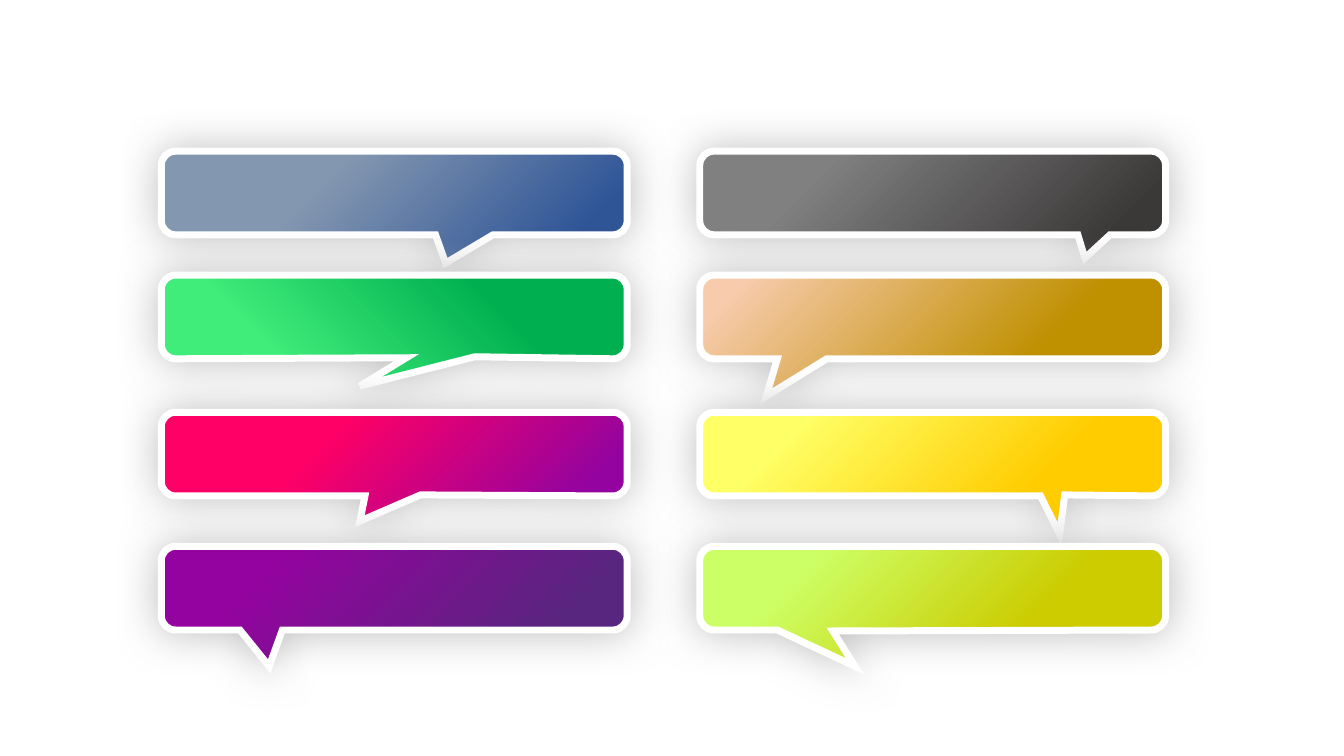
"""Build a slide of eight glossy speech bubbles in two columns."""
import pptx
import pptx.dml.color
import pptx.oxml
import pptx.oxml.ns
import pptx.util

Inches = pptx.util.Inches
qn = pptx.oxml.ns.qn

COLORS = {
    "outline": "FFFFFF", "shadow": "A6A6A6",
    "steel": "8497B0", "navy": "2F5597",
    "mint": "41ED7A", "green": "00B050",
    "pink": "FF0066", "purple": "94039F", "violet": "58267E",
    "gray": "808080", "charcoal": "3B3838",
    "peach": "F8CBAD", "bronze": "BF9000",
    "lemon": "FFFF66", "amber": "FFCC00",
    "lime": "CCFF66", "olive": "CCCC00",
}
COLUMN_LEFTS = (1.6, 6.94)
ROW_TOPS = (1.5, 2.73, 4.09, 5.42)
BUBBLE_WIDTH, BUBBLE_HEIGHT, CORNER_RADIUS = 4.62, 0.83, 0.14
CURVE_PULL = 0.55
UPRIGHT_START_CORNERS = (1, 5)
LEVEL_START_CORNERS = (3, 10)

BUBBLE_COLUMNS = (
    (
        (("steel", 0.33), ("navy", 0.87), 45, ((3.29, 0), (2.82, 0.28), (2.72, 0))),
        (("mint", 0.24), ("green", 0.73), 315, ((3.11, -0.02), (1.97, 0.27), (2.43, -0.01))),
        (("pink", 0.33), ("purple", 0.87), 45, ((2.57, -0.01), (1.97, 0.25), (2.02, 0))),
        (("purple", 0.21), ("violet", 0.82), 45, ((1.2, 0), (1.07, 0.36), (0.78, 0))),
    ),
    (
        (("gray", 0.24), ("charcoal", 0.87), 45, ((4.07, 0), (3.82, 0.23), (3.75, 0))),
        (("peach", 0.08), ("bronze", 0.71), 45, ((1.26, 0), (0.66, 0.37), (0.77, 0))),
        (("lemon", 0.19), ("amber", 0.7), 45, ((3.62, -0.01), (3.57, 0.38), (3.38, 0))),
        (("lime", 0.21), ("olive", 0.7), 45, ((1.32, 0.01), (1.54, 0.36), (0.77, 0))),
    ),
)


def rgb(name):
    """Return the named colour."""
    return pptx.dml.color.RGBColor.from_string(COLORS[name])


def bubble_points(left, top, tail):
    """Return the clockwise outline points of a box with a tail below."""
    right, bottom = left + BUBBLE_WIDTH, top + BUBBLE_HEIGHT
    near_x, far_x = left + CORNER_RADIUS, right - CORNER_RADIUS
    near_y, far_y = top + CORNER_RADIUS, bottom - CORNER_RADIUS
    return [(left, near_y), (near_x, top), (far_x, top), (right, near_y),
            (right, far_y), (far_x, bottom),
            *((left + x, bottom + y) for x, y in tail),
            (near_x, bottom), (left, far_y)]


def round_corners(shape):
    """Turn the four straight corner cuts of a bubble into curves."""
    outline = shape._element.spPr.find(".//" + qn("a:path"))
    segments = list(outline)
    points = [(int(point.get("x")), int(point.get("y"))) for point in outline.iter(qn("a:pt"))]
    for index in UPRIGHT_START_CORNERS + LEVEL_START_CORNERS:
        (start_x, start_y), (end_x, end_y) = points[index - 1:index + 1]
        pull_x = round(CURVE_PULL * (end_x - start_x))
        pull_y = round(CURVE_PULL * (end_y - start_y))
        if index in UPRIGHT_START_CORNERS:
            controls = ((start_x, start_y + pull_y), (end_x - pull_x, end_y))
        else:
            controls = ((start_x + pull_x, start_y), (end_x, end_y - pull_y))
        curve_points = "".join(f'<a:pt x="{x}" y="{y}"/>' for x, y in (*controls, points[index]))
        outline.replace(segments[index], pptx.oxml.parse_xml(
            f'<a:cubicBezTo {pptx.oxml.ns.nsdecls("a")}>{curve_points}</a:cubicBezTo>'))


def fill_gradient(shape, stops, angle):
    """Fill a shape with a two-stop linear gradient."""
    shape.fill.gradient()
    shape.fill.gradient_angle = 360 - angle
    for gradient_stop, (name, position) in zip(shape.fill.gradient_stops, stops):
        gradient_stop.color.rgb = rgb(name)
        gradient_stop.position = position


def outline_bubble(shape):
    """Give a shape a thick outline with pointed joins."""
    shape.line.color.rgb = rgb("outline")
    shape.line.width = pptx.util.Pt(5)
    line = shape._element.spPr.find(qn("a:ln"))
    line.append(pptx.oxml.parse_xml(
        f'<a:miter {pptx.oxml.ns.nsdecls("a")} lim="800000"/>'))


def add_glow_shadow(shape):
    """Add a soft shadow that spreads evenly around a shape."""
    shape.shadow.inherit = False
    effects = shape._element.spPr.find(qn("a:effectLst"))
    effects.append(pptx.oxml.parse_xml(
        f'<a:outerShdw {pptx.oxml.ns.nsdecls("a")} blurRad="{pptx.util.Pt(30)}" '
        'dist="0" dir="0" algn="ctr" rotWithShape="0">'
        f'<a:srgbClr val="{COLORS["shadow"]}"><a:alpha val="73000"/></a:srgbClr>'
        '</a:outerShdw>'))


def add_bubble(page, left, top, first_stop, last_stop, angle, tail):
    """Draw one speech bubble."""
    points = [(Inches(x), Inches(y)) for x, y in bubble_points(left, top, tail)]
    builder = page.shapes.build_freeform(*points[0])
    builder.add_line_segments(points[1:], close=True)
    bubble = builder.convert_to_shape()
    round_corners(bubble)
    fill_gradient(bubble, (first_stop, last_stop), angle)
    outline_bubble(bubble)
    add_glow_shadow(bubble)


def main():
    """Create the deck and save it."""
    deck = pptx.Presentation()
    deck.slide_width, deck.slide_height = Inches(13.33), Inches(7.5)
    page = deck.slides.add_slide(deck.slide_layouts[6])
    for left, bubbles in zip(COLUMN_LEFTS, BUBBLE_COLUMNS):
        for top, bubble in zip(ROW_TOPS, bubbles):
            add_bubble(page, left, top, *bubble)
    deck.save("out.pptx")


if __name__ == "__main__":
    main()
